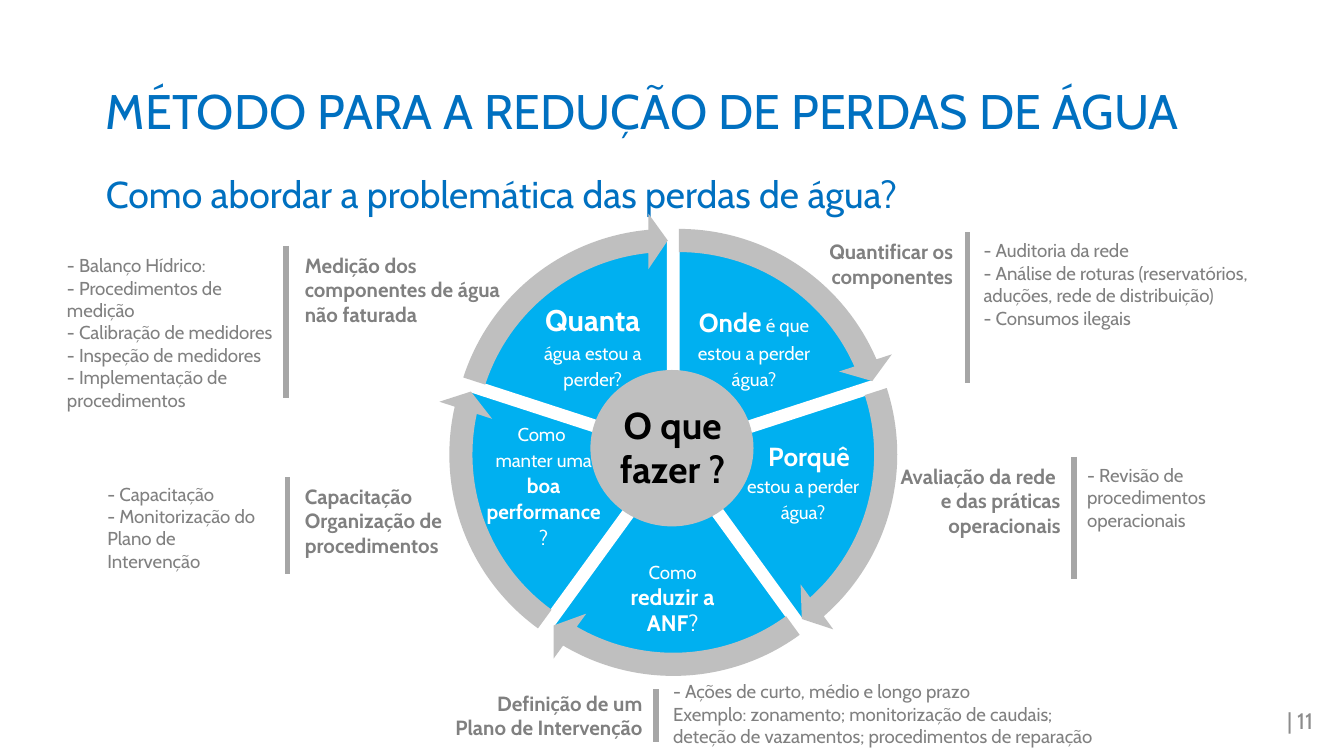
from math import cos, radians, sin
from lxml import etree
from pptx import Presentation
from pptx import util as u
from pptx.dml.color import RGBColor
from pptx.enum import shapes, text
from pptx.oxml.ns import qn

HUES = {"blue": "0070C0", "sky": "00B0F0", "gray": "808080", "bar": "A6A6A6",
        "ring": "BFBFBF", "page": "8C8C8C", "white": "FFFFFF", "black": "000000"}
SIDES = {"l": text.PP_ALIGN.LEFT, "c": text.PP_ALIGN.CENTER, "r": text.PP_ALIGN.RIGHT}

HEADS = [
    ((0.69, 0.3, 8.62, 1.09), "MÉTODO PARA A REDUÇÃO DE PERDAS DE ÁGUA", 26, True),
    ((0.69, 1.26, 6.66, 0.4), "Como abordar a problemática das perdas de água?", 20, False),
]
TOPICS = [
    ((2.17, 1.83, 1.67, 0.66), "l", ["Medição dos componentes de água não faturada"]),
    ((5.54, 1.73, 1.65, 0.47), "r", ["Quantificar os componentes"]),
    ((6.44, 3.4, 1.55, 0.66), "r", ["Avaliação da rede \ne das práticas operacionais"]),
    ((3.27, 5.09, 1.61, 0.47), "r", ["Definição de um Plano de Intervenção"]),
    ((2.17, 3.55, 1.47, 0.66), "l", ["Capacitação", "Organização de procedimentos"]),
]
NOTES = [
    ((0.4, 1.84, 1.81, 1.11), ["- Balanço Hídrico:", "- Procedimentos de medição",
                               "- Calibração de medidores", "- Inspeção de medidores",
                               "- Implementação de procedimentos"]),
    ((7.22, 1.73, 2.44, 0.77), ["- Auditoria da rede",
                                "- Análise de roturas (reservatórios, \naduções, rede de distribuição)",
                                "- Consumos ilegais"]),
    ((7.99, 3.4, 1.18, 0.61), ["- Revisão de procedimentos operacionais"]),
    ((4.91, 5.01, 3.42, 0.61), ["- Ações de curto, médio e longo prazo",
                                "Exemplo: zonamento; monitorização de caudais; "
                                "deteção de vazamentos; procedimentos de reparação"]),
    ((0.7, 3.54, 1.4, 0.61), ["- Capacitação", "- Monitorização do Plano de Intervenção"]),
]
BARS = [(2.13, 1.83, 2.13, 2.96), (7.2, 1.73, 7.2, 2.85), (7.99, 3.4, 7.99, 4.31),
        (4.88, 5.13, 4.88, 5.52), (2.14, 3.55, 2.14, 4.27)]
STEPS = [
    ((5.12, 2.28, 0.98, 0.66), 0, [("Onde", 14, True), (" é que estou a perder água?", 10, False)]),
    ((5.52, 3.24, 0.91, 0.73), 0.09, [("Porquê ", 14, True), ("estou a perder água?", 10, False)]),
    ((4.57, 4.04, 0.87, 0.8), 0, [("Como ", 10, False), ("reduzir a ANF", 12, True),
                                  ("?", 12, False)]),
    ((3.59, 3.24, 0.91, 0.73), 0, [("Como \nmanter uma ", 10, False),
                                   ("boa performance", 11, True), ("?", 11, False)]),
    ((3.92, 2.28, 0.98, 0.66), 0, [("Quanta ", 16, True), ("água estou a perder?", 10, False)]),
]
HUB = (5.01, 3.36)
SHIFT, PIE, RING = 0.07, 3.06, 3.44
TURN = 360 / len(STEPS)
UNIT = 0.6


def tint(hue):
    return RGBColor.from_string(HUES[hue])


def write(box, paras, hue, side="l", mid=False, pad=None, gap=None, dent=0):
    area = slide.shapes.add_textbox(*map(u.Inches, box))
    frame = area.text_frame
    look = {"word_wrap": True, "auto_size": text.MSO_AUTO_SIZE.NONE,
            "vertical_anchor": text.MSO_ANCHOR.MIDDLE if mid else text.MSO_ANCHOR.TOP}
    if pad is not None:
        for edge in ("left", "top", "right", "bottom"):
            look["margin_" + edge] = u.Inches(pad)
    for key, val in look.items():
        setattr(frame, key, val)
    for i, runs in enumerate(paras):
        para = frame.paragraphs[0] if i == 0 else frame.add_paragraph()
        para.alignment = SIDES[side]
        if gap:
            para.line_spacing = gap
        if dent:
            para._p.get_or_add_pPr().set("indent", str(u.Inches(dent)))
        for words, size, bold in runs:
            for j, part in enumerate(words.split("\n")):
                if j:
                    para.add_line_break()
                run = para.add_run()
                run.text = part
                form = {"name": "Cabin", "size": u.Pt(size), "bold": bold}
                for key, val in form.items():
                    setattr(run.font, key, val)
                run.font.color.rgb = tint(hue)


def draw(kind, box, hue, edge=None, turns=()):
    shape = slide.shapes.add_shape(kind, *map(u.Inches, box))
    shape.shadow.inherit = False
    shape.fill.solid()
    shape.fill.fore_color.rgb = tint(hue)
    if edge:
        shape.line.color.rgb = tint(edge)
        shape.line.width = u.Pt(1)
    else:
        shape.line.fill.background()
    for i, val in enumerate(turns):
        shape.adjustments[i] = val


def place(step, size):
    angle = radians(270 + TURN * (step + 0.5))
    return (HUB[0] + SHIFT * cos(angle) - size / 2,
            HUB[1] + SHIFT * sin(angle) - size / 2, size, size)


deck = Presentation()
deck.slide_width = u.Inches(10)
deck.slide_height = u.Inches(10 * 9 / 16)
slide = deck.slides.add_slide(deck.slide_layouts[6])

for box, words, size, mid in HEADS:
    write(box, [[(words, size, False)]], "blue", mid=mid, gap=0.9)
write((7.59, 5.21, 2.25, 0.3), [[("| 11", 12, False)]], "page", "r", True, 0.07)

for i, (box, dent, runs) in enumerate(STEPS):
    start, stop = ((270 + TURN * n) % 360 * UNIT for n in (i, i + 1))
    draw(shapes.MSO_SHAPE.PIE, place(i, PIE), "sky", "white", (start, stop))
    write(box, [runs], "white", "c", True, 0.02, u.Pt(14), dent)
for i in range(len(STEPS)):
    start = (270 + TURN * i) % 360
    tip = (start + 66.54) % 360
    draw(shapes.MSO_SHAPE.CIRCULAR_ARROW, place(i, RING), "ring",
         turns=(0.05, 3.28, tip * UNIT, start * UNIT, 0.06))

draw(shapes.MSO_SHAPE.OVAL, (4.4, 2.76, 1.2, 1.15), "ring", "ring")
write((4.27, 2.94, 1.47, 0.77), [[("O que fazer ?", 20, True)]], "black", "c")

for box, side, lines in TOPICS:
    write(box, [[(line, 11, True)] for line in lines], "gray", side)
for box, lines in NOTES:
    write(box, [[(line, 10, False)] for line in lines], "gray")
for ends in BARS:
    bar = slide.shapes.add_connector(shapes.MSO_CONNECTOR.STRAIGHT, *map(u.Inches, ends))
    bar.line.color.rgb = tint("bar")
    bar.line.width = u.Pt(3)
    etree.SubElement(bar._element.spPr, qn("a:effectLst"))

deck.save("out.pptx")
